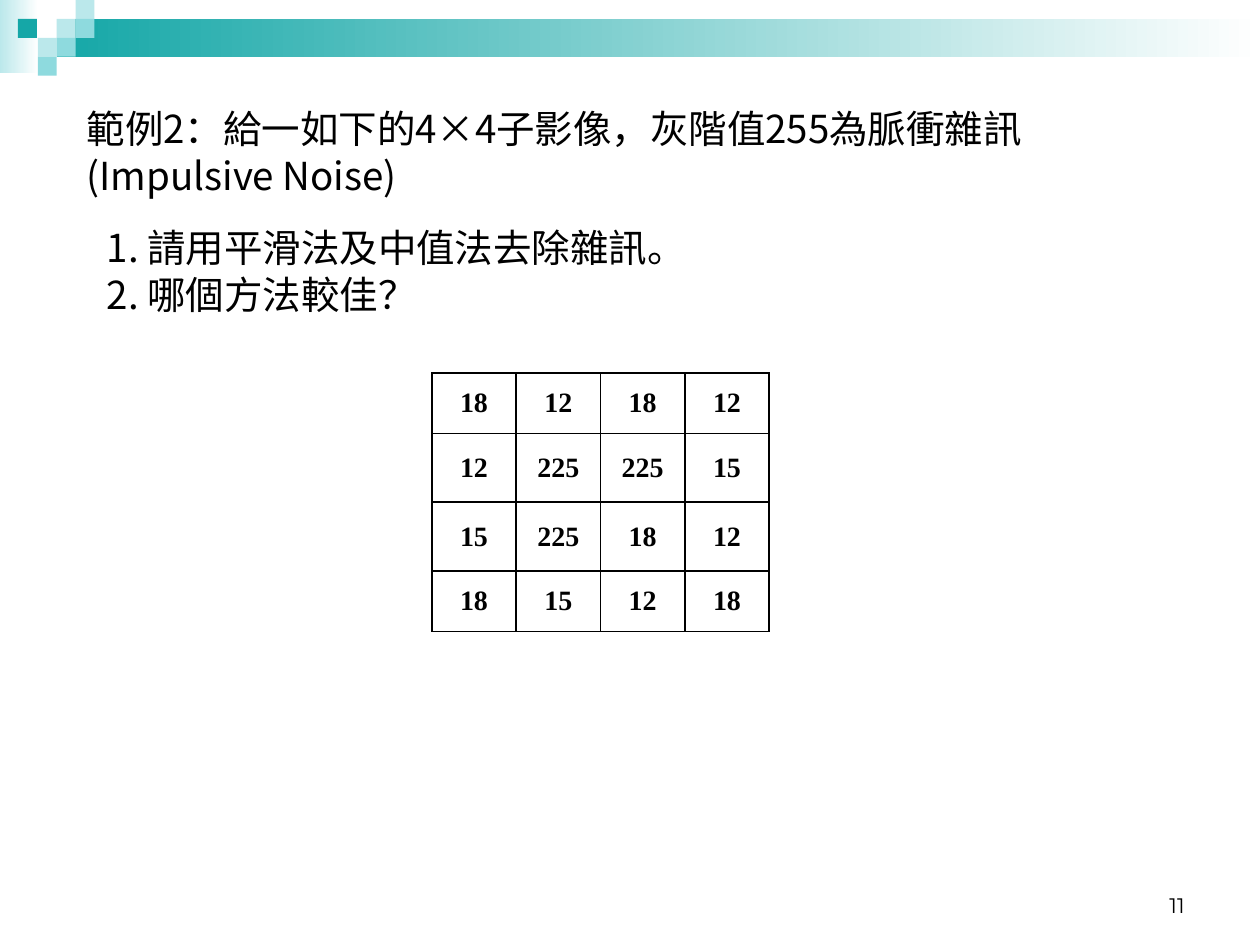
from lxml import etree
from pptx import Presentation
from pptx.dml.color import RGBColor
from pptx.enum.shapes import MSO_SHAPE
from pptx.enum.text import MSO_ANCHOR, PP_ALIGN
from pptx.oxml.ns import qn
from pptx.util import Pt

RECTANGLE = MSO_SHAPE.RECTANGLE
TOP, MIDDLE, BOTTOM = MSO_ANCHOR.TOP, MSO_ANCHOR.MIDDLE, MSO_ANCHOR.BOTTOM
LEFT, CENTER, RIGHT = PP_ALIGN.LEFT, PP_ALIGN.CENTER, PP_ALIGN.RIGHT
TEAL, AQUA, MIST, WHITE, BLACK = "15A7A7", "8EDADE", "BBE8EB", "FFFFFF", "000000"
CHINESE, SERIF, SANS = "Noto Sans CJK SC", "Times New Roman", "Montserrat"
SQUARE = 10.8


def color(value):
    """Turn a hex string into a colour."""
    return RGBColor.from_string(value)


class SlideBuilder:
    """Hold the style and the current slide."""

    def __init__(self, slide):
        """Start on the given slide."""
        self.slide = slide

    def rectangle(self, left, top, width, height, fill, fade=None):
        """Add a borderless rectangle, plain or fading to the right."""
        box = self.slide.shapes.add_shape(RECTANGLE, Pt(left), Pt(top), Pt(width), Pt(height))
        box.shadow.inherit = False
        box.line.fill.background()
        if fade:
            box.fill.gradient()
            box.fill.gradient_angle = 0
            for stop, value in zip(box.fill.gradient_stops, (fill, fade)):
                stop.color.rgb = color(value)
        else:
            box.fill.solid()
            box.fill.fore_color.rgb = color(fill)

    def span(self, para, text, size, font, bold=False):
        """Add one styled run to a paragraph."""
        span = para.add_run()
        span.text = text
        span.font.size = Pt(size)
        span.font.name = font
        span.font.bold = bold
        span.font.color.rgb = color(BLACK)
        etree.SubElement(span.font._element, qn("a:ea"), typeface=font)

    def text(self, left, top, width, height, lines, size, font,
             align=LEFT, anchor=TOP, spacing=None, hanging=0):
        """Add a wrapped text box with one paragraph per line."""
        box = self.slide.shapes.add_textbox(Pt(left), Pt(top), Pt(width), Pt(height))
        frame = box.text_frame
        frame.word_wrap = True
        frame.vertical_anchor = anchor
        for index, line in enumerate(lines):
            para = frame.add_paragraph() if index else frame.paragraphs[0]
            para.alignment = align
            if spacing:
                para.line_spacing = Pt(spacing)
            if hanging:
                properties = para._p.get_or_add_pPr()
                properties.set("marL", str(Pt(hanging)))
                properties.set("indent", str(-Pt(hanging)))
            self.span(para, line, size, font)

    def border(self, cell):
        """Draw a thin black line on all sides of a cell."""
        properties = cell._tc.get_or_add_tcPr()
        for position, side in enumerate(("a:lnL", "a:lnR", "a:lnT", "a:lnB")):
            line = etree.Element(qn(side), w=str(Pt(1)))
            fill = etree.SubElement(line, qn("a:solidFill"))
            etree.SubElement(fill, qn("a:srgbClr"), val=BLACK)
            properties.insert(position, line)

    def table(self, left, top, column_width, row_heights, rows):
        """Add a grid of centred bold numbers."""
        columns = len(rows[0])
        table = self.slide.shapes.add_table(
            len(rows), columns, Pt(left), Pt(top),
            Pt(column_width * columns), Pt(sum(row_heights))).table
        table.first_row = table.horz_banding = False
        for column in table.columns:
            column.width = Pt(column_width)
        for row, height, values in zip(table.rows, row_heights, rows):
            row.height = Pt(height)
            for cell, value in zip(row.cells, values):
                cell.fill.background()
                cell.vertical_anchor = MIDDLE
                para = cell.text_frame.paragraphs[0]
                para.alignment = CENTER
                self.span(para, str(value), 16, SERIF, bold=True)
                self.border(cell)


def main():
    """Build the example slide and save it."""
    deck = Presentation()
    deck.slide_width, deck.slide_height = Pt(720), Pt(540)
    page = SlideBuilder(deck.slides.add_slide(deck.slide_layouts[6]))

    page.rectangle(0, 0, 22, 42, MIST, WHITE)
    page.rectangle(3 * SQUARE, SQUARE, 720 - 3 * SQUARE, 2 * SQUARE, TEAL, WHITE)
    squares = [(3, 1, MIST), (4, 0, MIST), (4, 1, AQUA), (2, 2, MIST),
               (0.95, 1, TEAL), (3, 2, AQUA), (2, 3, AQUA)]
    for column, row, fill in squares:
        page.rectangle(column * SQUARE, row * SQUARE, SQUARE, SQUARE, fill)

    page.table(246.75, 213.25, 48.2, (34.5, 39.2, 39.5, 34.5), [
        (18, 12, 18, 12),
        (12, 225, 225, 15),
        (15, 225, 18, 12),
        (18, 15, 12, 18),
    ])
    page.text(516, 492, 168, 36, ["11"], 12, SANS, align=RIGHT, anchor=BOTTOM)
    page.text(42.5, 56.5, 623.5, 60.5,
              ["範例2：給一如下的4×4子影像，灰階值255為脈衝雜訊 (Impulsive Noise)"],
              22, CHINESE, spacing=26.5)
    page.text(54, 124.5, 646.5, 60,
              ["1. 請用平滑法及中值法去除雜訊。", "2. 哪個方法較佳？"],
              22, CHINESE, spacing=26.5, hanging=27)
    deck.save("out.pptx")


if __name__ == "__main__":
    main()
